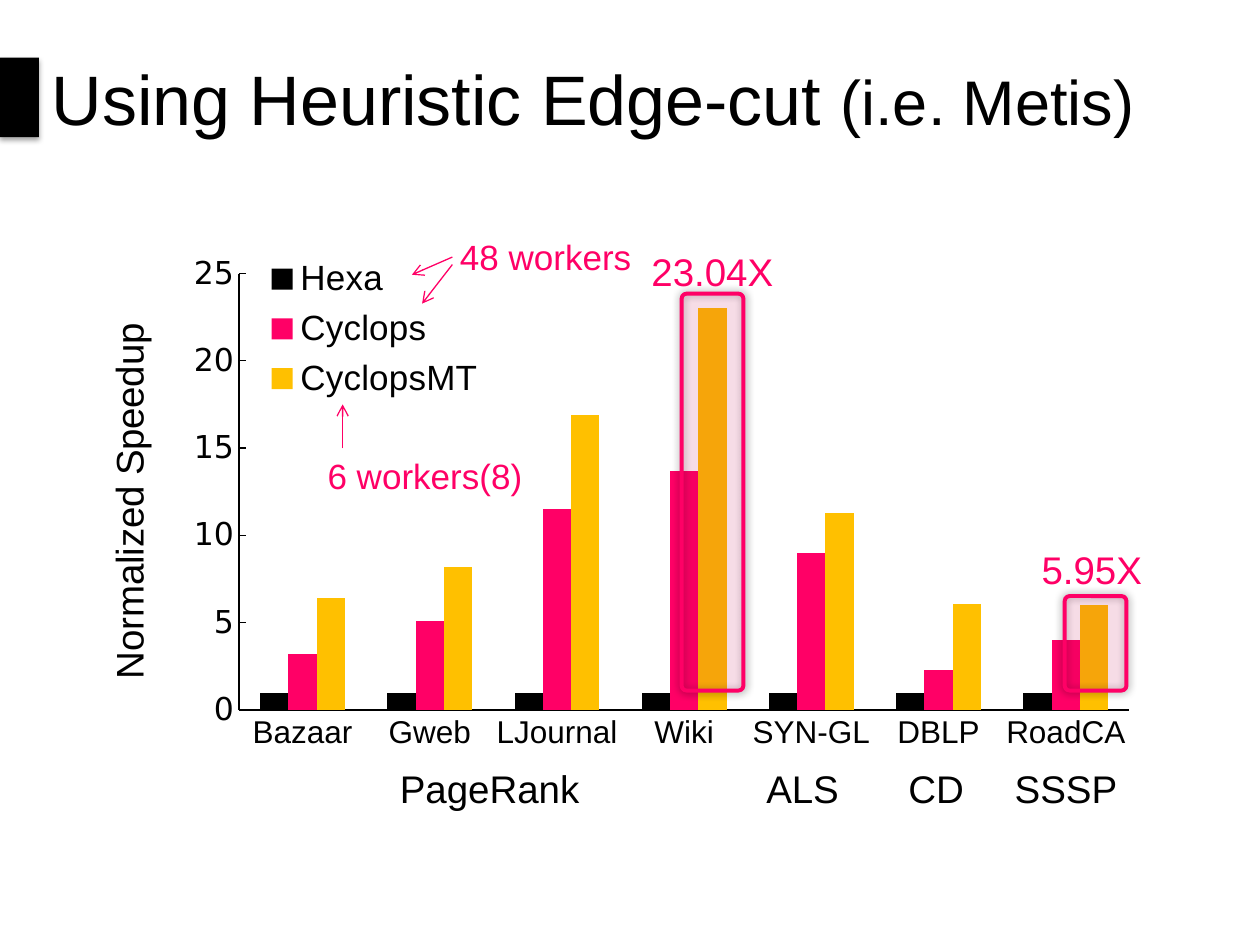
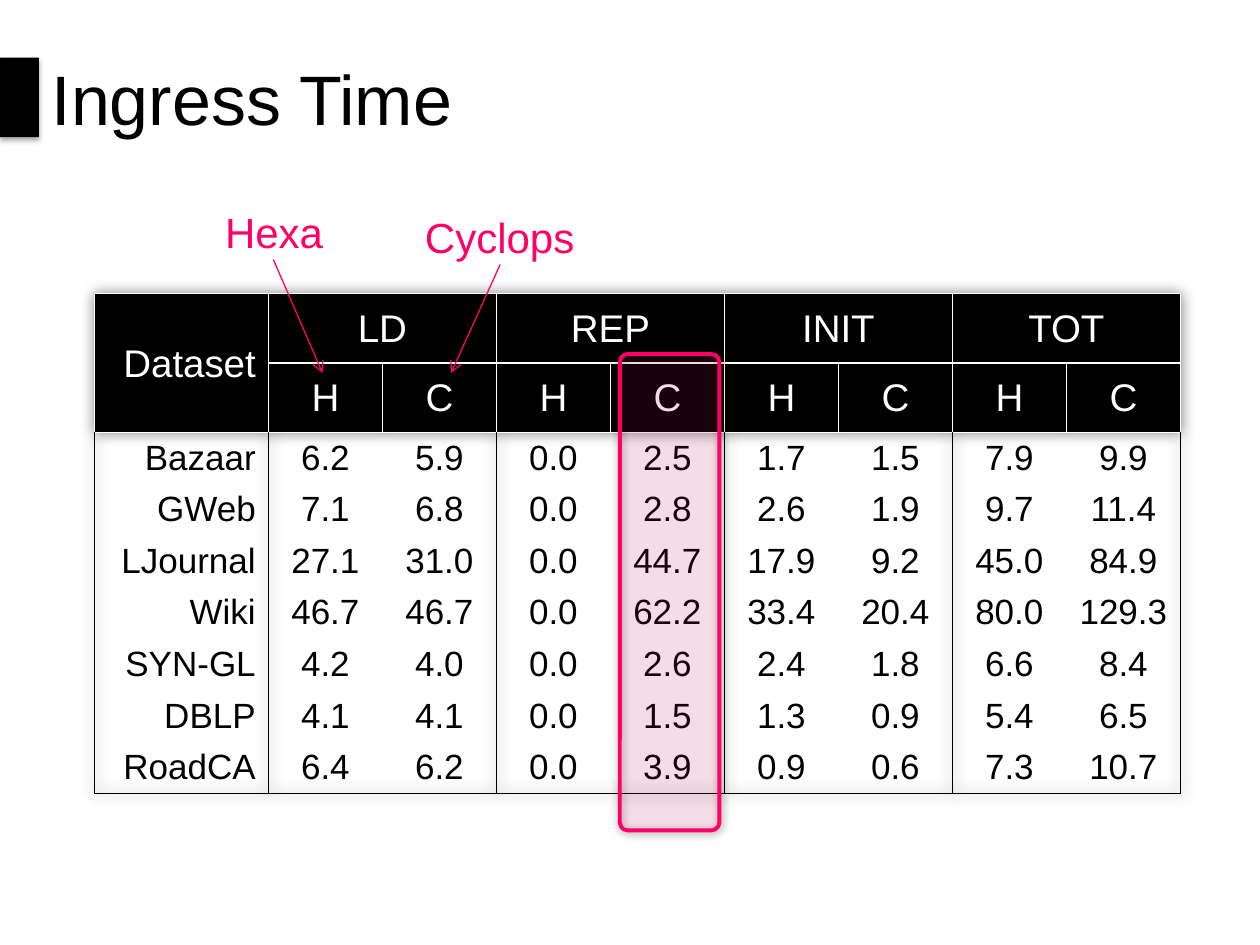
"""Build two slides on graph engine speedup and ingress time."""
from lxml import etree
from pptx import Presentation
from pptx.chart.data import CategoryChartData
from pptx.dml.color import RGBColor
from pptx.enum.chart import XL_CHART_TYPE, XL_LEGEND_POSITION, XL_TICK_MARK
from pptx.enum.shapes import MSO_CONNECTOR, MSO_SHAPE
from pptx.enum.text import MSO_ANCHOR, MSO_AUTO_SIZE, PP_ALIGN
from pptx.oxml.ns import qn
from pptx.util import Pt

COLUMNS = XL_CHART_TYPE.COLUMN_CLUSTERED
LEGEND_RIGHT = XL_LEGEND_POSITION.RIGHT
TICK_NONE, TICK_INSIDE = XL_TICK_MARK.NONE, XL_TICK_MARK.INSIDE
STRAIGHT = MSO_CONNECTOR.STRAIGHT
RECT, ROUNDED = MSO_SHAPE.RECTANGLE, MSO_SHAPE.ROUNDED_RECTANGLE
MIDDLE, TOP = MSO_ANCHOR.MIDDLE, MSO_ANCHOR.TOP
NO_FIT = MSO_AUTO_SIZE.NONE
LEFT, CENTER, RIGHT = PP_ALIGN.LEFT, PP_ALIGN.CENTER, PP_ALIGN.RIGHT

COLORS = {"ink": "000000", "paper": "FFFFFF", "accent": "FF0066", "gold": "FFC000"}
FONT = "Arial"
NO_STYLE = "{2D5ABB26-0587-4C30-8999-92F81FD0307C}"
TITLE_AT = (22.3, 0, 697.7, 111.6)
BAND_AT = (0, 33, 22.3, 45.4)
BAND_SHADOW = {"alpha": 35, "blur": 3.1, "dist": 1.8, "angle": 90}
GLOW = {"alpha": 40, "blur": 5, "dist": 0, "angle": 0}
TABLE_GLOW = {"alpha": 50, "blur": 8, "dist": 0, "angle": 0}

SPEEDUP_TITLE = [("Using Heuristic Edge-cut ", 40), ("(i.e. Metis)", 36)]
DATASETS = ["Bazaar", "Gweb", "LJournal", "Wiki", "SYN-GL", "DBLP", "RoadCA"]
SPEEDUPS = [
    ("Hexa", "ink", [1] * 7),
    ("Cyclops", "accent", [3.2, 5.1, 11.5, 13.7, 9, 2.3, 4]),
    ("CyclopsMT", "gold", [6.4, 8.2, 16.9, 23, 11.3, 6.1, 6]),
]
CHART_AT = (49.7, 128.2, 620.6, 351.4)
PLOT_LAYOUT = {"x": 0.14, "y": 0.08, "w": 0.82, "h": 0.71}
LEGEND_LAYOUT = {"x": 0.15, "y": 0.04, "w": 0.23, "h": 0.26}
AXIS_TITLE_LAYOUT = {"x": 0.01, "y": 0.15}
ALGORITHMS = [("PageRank", 221.8, 115.9), ("ALS", 424.8, 67.7),
              ("CD", 501.1, 67.7), ("SSSP", 575.3, 67.7)]
PEAKS = [("23.04X", (375.8, 145.4, 62.6, 20.2)), ("5.95X", (592.6, 315.4, 62.6, 20.2))]
WORKERS = [("48 workers", (262.8, 136.8, 108.7, 20.2)),
           ("6 workers(8)", (187.2, 261.4, 127.4, 20.2))]
PEAK_FRAMES = [(389.5, 167.8, 35.3, 226.8), (608.4, 340.6, 35.3, 54)]
WORKER_ARROWS = [(258.5, 151.2, 241.2, 173.5), (195.8, 256.3, 195.8, 231.1),
                 (258.5, 146.9, 235.4, 157)]

INGRESS_TITLE = [("Ingress Time", 40)]
PHASES = ["LD", "REP", "INIT", "TOT"]
SYSTEMS = ["H", "C"]
INGRESS = [
    ("Bazaar", "6.2", "5.9", "0.0", "2.5", "1.7", "1.5", "7.9", "9.9"),
    ("GWeb", "7.1", "6.8", "0.0", "2.8", "2.6", "1.9", "9.7", "11.4"),
    ("LJournal", "27.1", "31.0", "0.0", "44.7", "17.9", "9.2", "45.0", "84.9"),
    ("Wiki", "46.7", "46.7", "0.0", "62.2", "33.4", "20.4", "80.0", "129.3"),
    ("SYN-GL", "4.2", "4.0", "0.0", "2.6", "2.4", "1.8", "6.6", "8.4"),
    ("DBLP", "4.1", "4.1", "0.0", "1.5", "1.3", "0.9", "5.4", "6.5"),
    ("RoadCA", "6.4", "6.2", "0.0", "3.9", "0.9", "0.6", "7.3", "10.7"),
]
TABLE_AT = (54, 167.8)
NAME_WIDTH, VALUE_WIDTH = 99.4, 65.15
HEAD_HEIGHT, BODY_HEIGHT = 39.6, 29.5
REP_FRAME = (354.2, 202.3, 56.9, 272.2)
SYSTEM_NAMES = [("Cyclops", (234, 125.3, 103, 25.2)), ("Hexa", (105.1, 122.4, 103, 25.2))]
SYSTEM_ARROWS = [(285.8, 151.2, 257.8, 213.1), (156.2, 148.3, 184.3, 213.1)]


def rgb(color):
    return RGBColor.from_string(COLORS[color])


def points(values):
    return [Pt(value) for value in values]


def apply(target, values):
    for name, value in values.items():
        setattr(target, name, value)


def style_font(font, size, color="ink", face=FONT):
    apply(font, {"size": Pt(size), "name": face, "bold": False})
    font.color.rgb = rgb(color)


def style_line(line, color, width):
    line.color.rgb = rgb(color)
    line.width = Pt(width)


def add_color(parent, color, alpha=None):
    node = etree.SubElement(parent, qn("a:srgbClr"), val=COLORS[color])
    if alpha is not None:
        etree.SubElement(node, qn("a:alpha"), val=str(alpha * 1000))


def add_shadow(effects, alpha, blur, dist, angle):
    shadow = etree.SubElement(effects, qn("a:outerShdw"), blurRad=str(Pt(blur)),
                              dist=str(Pt(dist)), dir=str(angle * 60000),
                              algn="ctr", rotWithShape="0")
    add_color(shadow, "ink", alpha)


def add_block(slide, preset, at, color, shadow):
    block = slide.shapes.add_shape(preset, *points(at))
    block.shadow.inherit = False
    add_shadow(block._element.spPr.find(qn("a:effectLst")), **shadow)
    block.fill.solid()
    block.fill.fore_color.rgb = rgb(color)
    block.line.fill.background()
    return block


def add_frame(slide, at):
    frame = add_block(slide, ROUNDED, at, "accent", GLOW)
    frame.adjustments[0] = 0.08
    style_line(frame.line, "accent", 2.25)
    fill = frame._element.spPr.find(qn("a:solidFill"))
    fill.clear()
    add_color(fill, "accent", 10)


def add_label(slide, text, at, size, color="accent", align=CENTER, top=0):
    frame = slide.shapes.add_textbox(*points(at)).text_frame
    apply(frame, {"margin_left": 0, "margin_right": 0, "margin_bottom": 0,
                  "margin_top": Pt(top), "word_wrap": False, "auto_size": NO_FIT,
                  "vertical_anchor": MIDDLE})
    line = frame.paragraphs[0]
    apply(line, {"alignment": align, "line_spacing": 0.8})
    run = line.add_run()
    run.text = text
    style_font(run.font, size, color)


def add_arrow(slide, ends):
    arrow = slide.shapes.add_connector(STRAIGHT, *points(ends))
    style_line(arrow.line, "accent", 0.75)
    properties = arrow._element.spPr
    etree.SubElement(properties.find(qn("a:ln")), qn("a:tailEnd"), type="arrow")
    etree.SubElement(properties, qn("a:effectLst"))


def add_slide(deck, title_runs):
    slide = deck.slides.add_slide(deck.slide_layouts[5])
    title = slide.shapes.title
    apply(title, dict(zip(("left", "top", "width", "height"), points(TITLE_AT))))
    apply(title.text_frame, {"vertical_anchor": MIDDLE, "word_wrap": True,
                             "auto_size": NO_FIT})
    line = title.text_frame.paragraphs[0]
    line.alignment = LEFT
    for text, size in title_runs:
        run = line.add_run()
        run.text = text
        style_font(run.font, size)
    add_block(slide, RECT, BAND_AT, "ink", BAND_SHADOW)
    return slide


def set_layout(parent, index, place, inner=False):
    for stale in parent.findall(qn("c:layout")):
        parent.remove(stale)
    layout = etree.Element(qn("c:layout"))
    manual = etree.SubElement(layout, qn("c:manualLayout"))
    if inner:
        etree.SubElement(manual, qn("c:layoutTarget"), val="inner")
    for key in ("x", "y"):
        etree.SubElement(manual, qn(f"c:{key}Mode"), val="edge")
    for key, value in place.items():
        etree.SubElement(manual, qn(f"c:{key}"), val=str(value))
    parent.insert(index, layout)


def add_speedup_chart(slide):
    data = CategoryChartData()
    data.categories = DATASETS
    for name, _, values in SPEEDUPS:
        data.add_series(name, values)
    chart = slide.shapes.add_chart(COLUMNS, *points(CHART_AT), data).chart
    style_font(chart.font, 18, face="Calibri")
    apply(chart, {"has_title": False, "has_legend": True})
    apply(chart.legend, {"position": LEGEND_RIGHT, "include_in_layout": False})
    style_font(chart.legend.font, 20)

    plot = chart.plots[0]
    apply(plot, {"gap_width": 150, "overlap": 0, "vary_by_categories": False})
    for series, (_, color, _) in zip(plot.series, SPEEDUPS):
        series.format.fill.solid()
        series.format.fill.fore_color.rgb = rgb(color)

    speedup = chart.value_axis
    apply(speedup, {"minimum_scale": 0, "maximum_scale": 25, "major_unit": 5})
    for axis, tick, face in ((chart.category_axis, TICK_NONE, FONT),
                             (speedup, TICK_INSIDE, "DejaVu Sans")):
        apply(axis, {"major_tick_mark": tick, "minor_tick_mark": TICK_NONE,
                     "has_major_gridlines": False})
        style_font(axis.tick_labels.font, 18, face=face)
        style_line(axis.format.line, "ink", 0.75)
    caption = speedup.axis_title
    caption.text_frame.text = "Normalized Speedup"
    style_font(caption.text_frame.paragraphs[0].runs[0].font, 22)

    set_layout(chart._chartSpace.chart.plotArea, 0, PLOT_LAYOUT, inner=True)
    set_layout(chart.legend._element, 1, LEGEND_LAYOUT)
    set_layout(caption._element, 1, AXIS_TITLE_LAYOUT)


def set_borders(cell, borders):
    properties = cell._tc.get_or_add_tcPr()
    for side in "LRTB":
        line = etree.SubElement(properties, qn(f"a:ln{side}"), w=str(Pt(1)))
        if side in borders:
            add_color(etree.SubElement(line, qn("a:solidFill")), borders[side])
        else:
            etree.SubElement(line, qn("a:noFill"))


def body_borders(row, column, last_row):
    borders = {}
    if column == 0 or column % 2:
        borders["L"] = "ink"
    if column % 2 == 0:
        borders["R"] = "ink"
    if row == 2:
        borders["T"] = "paper"
    if row == last_row:
        borders["B"] = "ink"
    return borders


def add_ingress_table(slide):
    phase_row = ["Dataset"] + [text for phase in PHASES for text in (phase, "")]
    rows = [phase_row, [""] + SYSTEMS * len(PHASES), *INGRESS]
    widths = [NAME_WIDTH] + [VALUE_WIDTH] * (len(phase_row) - 1)
    heights = [HEAD_HEIGHT] * 2 + [BODY_HEIGHT] * len(INGRESS)
    table = slide.shapes.add_table(len(rows), len(widths), *points(
        (*TABLE_AT, sum(widths), sum(heights)))).table
    apply(table, {"first_row": False, "horz_banding": False})
    properties = table._tbl.tblPr
    properties.find(qn("a:tableStyleId")).text = NO_STYLE
    effects = etree.Element(qn("a:effectLst"))
    add_shadow(effects, **TABLE_GLOW)
    properties.insert(0, effects)
    for column, width in zip(table.columns, widths):
        column.width = Pt(width)
    for row, height in zip(table.rows, heights):
        row.height = Pt(height)

    for r, texts in enumerate(rows):
        head = r < 2
        for c, text in enumerate(texts):
            cell = table.cell(r, c)
            apply(cell, {"text": text, "margin_top": Pt(3.5), "margin_bottom": Pt(2.5),
                         "vertical_anchor": MIDDLE if head else TOP})
            line = cell.text_frame.paragraphs[0]
            line.alignment = CENTER if c else RIGHT
            style_font(line.font, 22 if head else 20, "paper" if head else "ink")
            set_borders(cell, dict.fromkeys("LRTB", "paper") if head
                        else body_borders(r, c, len(rows) - 1))
            if head:
                cell.fill.solid()
                cell.fill.fore_color.rgb = rgb("ink")
            else:
                cell.fill.background()
    table.cell(0, 0).merge(table.cell(1, 0))
    for c in range(1, len(widths), 2):
        table.cell(0, c).merge(table.cell(0, c + 1))


def build_speedup(deck):
    slide = add_slide(deck, SPEEDUP_TITLE)
    add_speedup_chart(slide)
    for name, left, width in ALGORITHMS:
        add_label(slide, name, (left, 440, width, 25.2), 22, "ink")
    for at in PEAK_FRAMES:
        add_frame(slide, at)
    for text, at in PEAKS:
        add_label(slide, text, at, 22, top=4.3)
    for text, at in WORKERS:
        add_label(slide, text, at, 20, align=LEFT, top=4.3)
    for ends in WORKER_ARROWS:
        add_arrow(slide, ends)


def build_ingress(deck):
    slide = add_slide(deck, INGRESS_TITLE)
    add_ingress_table(slide)
    add_frame(slide, REP_FRAME)
    for name, at in SYSTEM_NAMES:
        add_label(slide, name, at, 24)
    for ends in SYSTEM_ARROWS:
        add_arrow(slide, ends)


def main():
    deck = Presentation()
    apply(deck, {"slide_width": Pt(720), "slide_height": Pt(540)})
    build_speedup(deck)
    build_ingress(deck)
    deck.save("out.pptx")


if __name__ == "__main__":
    main()
